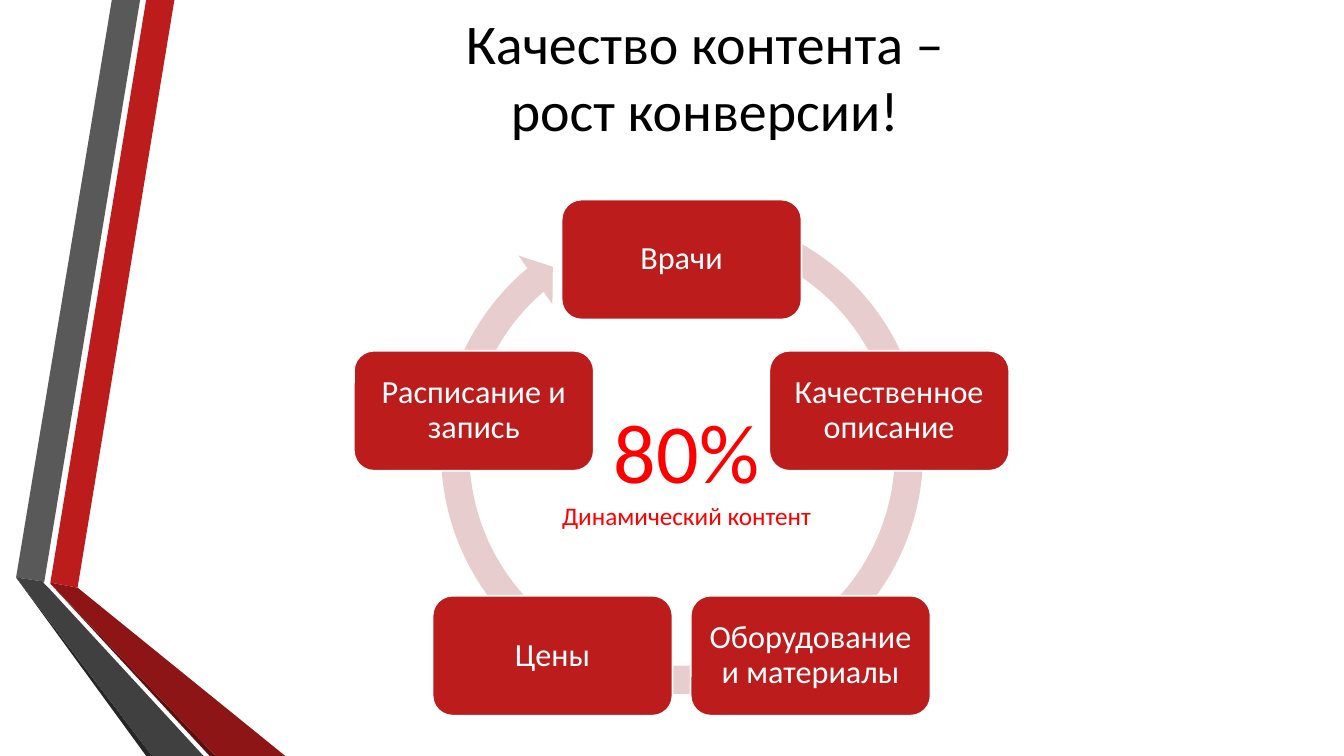
"""Build a slide with a cycle of five kinds of content around a share figure."""
import math
from dataclasses import dataclass

import pptx
import pptx.dml.color
import pptx.enum.shapes
import pptx.enum.text
import pptx.shapes.autoshape
import pptx.slide
import pptx.text.text
import pptx.util

RGB = pptx.dml.color.RGBColor
KIND = pptx.enum.shapes.MSO_SHAPE
FIT = pptx.enum.text.MSO_AUTO_SIZE
MIDDLE = pptx.enum.text.MSO_ANCHOR.MIDDLE
CENTER = pptx.enum.text.PP_ALIGN.CENTER

WHITE = RGB(0xFF, 0xFF, 0xFF)
BLACK = RGB(0x00, 0x00, 0x00)
BRIGHT = RGB(0xFF, 0x00, 0x00)
RED = RGB(0xBC, 0x1C, 0x1C)
MAROON = RGB(0x8D, 0x15, 0x15)
WINE = RGB(0x5E, 0x0E, 0x0E)
PINK = RGB(0xE7, 0xCD, 0xCD)
GRAY = RGB(0x59, 0x59, 0x59)
DARK = RGB(0x40, 0x40, 0x40)
COAL = RGB(0x26, 0x26, 0x26)

SCALE = 9144
MID_X, MID_Y, RADIUS = 676, 475, 217
NODE_W, NODE_H = 238, 119
RING = (0.055, 3.307, 137.843, 173.809, 0.058)
TOPICS = (
    "Врачи",
    "Качественное описание",
    "Оборудование и материалы",
    "Цены",
    "Расписание и запись",
)


@dataclass(frozen=True)
class Ribbon:
    """A filled band of the side ornament."""
    color: RGB
    points: tuple[tuple[int, int], ...]


RIBBONS = (
    Ribbon(RED, ((50, 578), (77, 583), (173, 0), (145, 0))),
    Ribbon(GRAY, ((139, 0), (111, 0), (16, 573), (44, 577))),
    Ribbon(COAL, ((16, 573), (145, 750), (151, 750))),
    Ribbon(WINE, ((50, 579), (208, 750), (214, 750))),
    Ribbon(MAROON, ((50, 579), (214, 750), (283, 750), (77, 583), (50, 578))),
    Ribbon(DARK, ((202, 750), (48, 583), (43, 578), (44, 577), (16, 573), (151, 750))),
)


def px(size: int) -> pptx.util.Emu:
    """Turn px into EMU."""
    return pptx.util.Emu(size * SCALE)


def write(para: pptx.text.text._Paragraph, text: str, *, size: int,
          color: RGB, space: float = 1.0) -> None:
    """Fill a centred paragraph, with a line break at each newline."""
    para.alignment = CENTER
    para.line_spacing = space
    for row, line in enumerate(text.splitlines()):
        if row:
            para.add_line_break()
        run = para.add_run()
        run.text = line
        run.font.name = "Calibri"
        run.font.size = pptx.util.Pt(size)
        run.font.color.rgb = color


def paint(shape: pptx.shapes.autoshape.Shape, color: RGB) -> None:
    """Give a shape a flat fill with no line or shadow."""
    shape.shadow.inherit = False
    shape.fill.solid()
    shape.fill.fore_color.rgb = color
    shape.line.fill.background()


def draw_band(slide: pptx.slide.Slide, band: Ribbon) -> None:
    """Draw one band of the ornament."""
    start, *rest = band.points
    form = slide.shapes.build_freeform(*start, scale=SCALE)
    form.add_line_segments(rest, close=True)
    paint(form.convert_to_shape(), band.color)


def draw_title(slide: pptx.slide.Slide) -> None:
    """Place and fill the title."""
    title = slide.shapes.title
    title.left, title.top, title.width, title.height = map(px, (151, 0, 1096, 150))
    frame = title.text_frame
    frame.auto_size = FIT.NONE
    frame.vertical_anchor = MIDDLE
    write(frame.paragraphs[0], """Качество контента –
рост конверсии!""", size=40, color=BLACK)


def draw_ring(slide: pptx.slide.Slide) -> None:
    """Draw the round arrow behind the nodes."""
    ring = slide.shapes.add_shape(KIND.CIRCULAR_ARROW, px(422), px(195), px(509), px(509))
    for index, value in enumerate(RING):
        ring.adjustments[index] = value
    paint(ring, PINK)


def draw_node(slide: pptx.slide.Slide, index: int, text: str) -> None:
    """Draw a node at its place on the circle."""
    angle = math.tau * index / len(TOPICS)
    left = round(MID_X + RADIUS * math.sin(angle) - NODE_W / 2)
    top = round(MID_Y - RADIUS * math.cos(angle) - NODE_H / 2)
    node = slide.shapes.add_shape(KIND.ROUNDED_RECTANGLE, px(left), px(top),
                                  px(NODE_W), px(NODE_H))
    paint(node, RED)
    node.line.color.rgb = WHITE
    node.line.width = pptx.util.Pt(1.25)
    frame = node.text_frame
    frame.word_wrap = True
    frame.vertical_anchor = MIDDLE
    frame.margin_left = frame.margin_right = px(10)
    frame.margin_top = frame.margin_bottom = px(10)
    write(frame.paragraphs[0], text, size=23, color=WHITE, space=0.9)


def draw_share(slide: pptx.slide.Slide) -> None:
    """Write the share figure inside the ring."""
    box = slide.shapes.add_textbox(px(543), px(391), px(276), px(141))
    frame = box.text_frame
    frame.word_wrap = False
    frame.auto_size = FIT.SHAPE_TO_FIT_TEXT
    write(frame.paragraphs[0], "80%", size=60, color=BRIGHT)
    write(frame.add_paragraph(), "Динамический контент", size=18, color=BRIGHT)


def main() -> None:
    """Build and save the slide."""
    deck = pptx.Presentation()
    deck.slide_width, deck.slide_height = px(1333), px(750)
    slide = deck.slides.add_slide(deck.slide_layouts.get_by_name("Title Only"))
    for band in RIBBONS:
        draw_band(slide, band)
    draw_ring(slide)
    for index, text in enumerate(TOPICS):
        draw_node(slide, index, text)
    draw_title(slide)
    draw_share(slide)
    deck.save("out.pptx")


if __name__ == "__main__":
    main()
